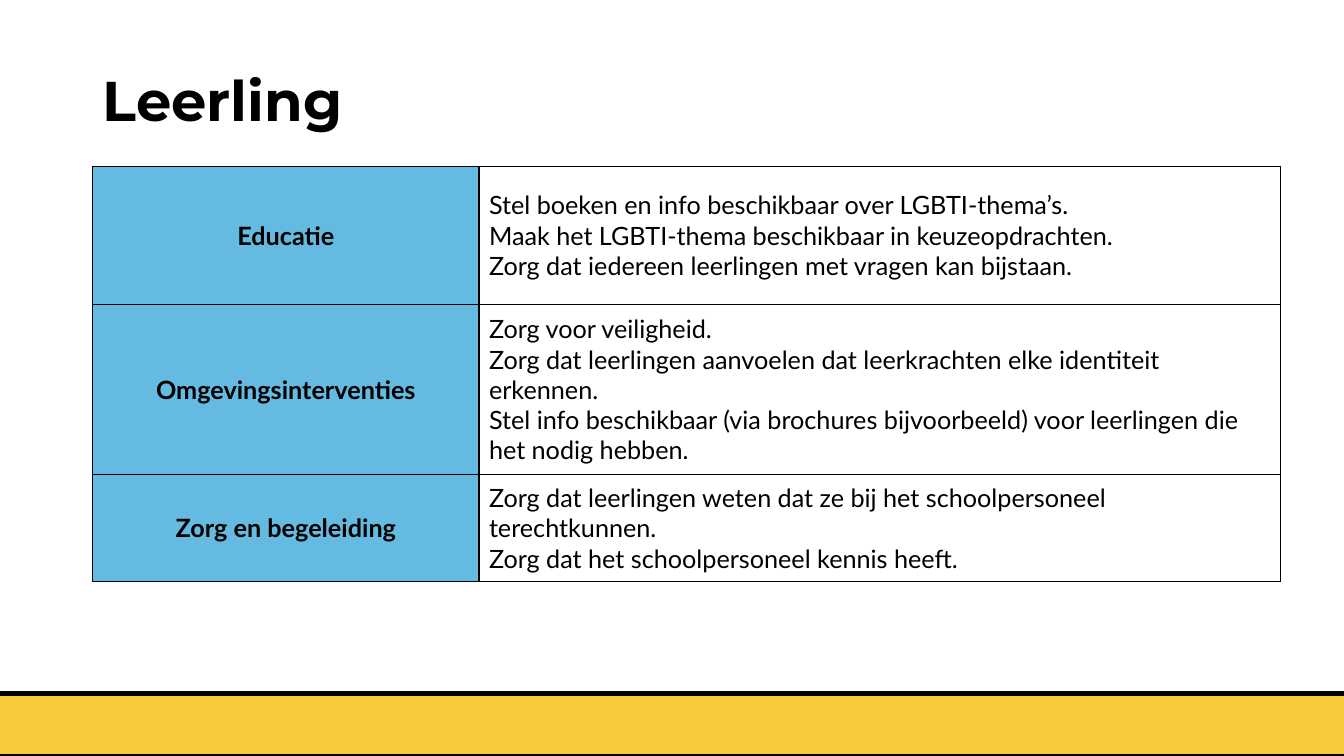
from lxml import etree
from pptx import Presentation
from pptx.dml.color import RGBColor
from pptx.enum.shapes import MSO_SHAPE
from pptx.enum.text import MSO_ANCHOR, PP_ALIGN
from pptx.oxml.ns import qn
from pptx.util import Inches, Pt

RECTANGLE = MSO_SHAPE.RECTANGLE
MIDDLE = MSO_ANCHOR.MIDDLE
LEFT, CENTER = PP_ALIGN.LEFT, PP_ALIGN.CENTER

BLACK = RGBColor(0x00, 0x00, 0x00)
YELLOW = RGBColor(0xF7, 0xCB, 0x3B)
BLUE = RGBColor(0x65, 0xBA, 0xE1)

TITLE_FONT = {"name": "Montserrat", "size": Pt(40), "bold": True}
TOPIC_FONT = {"name": "Lato", "size": Pt(18), "bold": True}
ADVICE_FONT = {"name": "Lato", "size": Pt(18), "bold": False}

COLUMN_WIDTHS = [3.83, 7.95]
ROW_HEIGHTS = [1.37, 1.69, 1.06]
ADVICE_BY_TOPIC = {
    "Educatie": [
        "Stel boeken en info beschikbaar over LGBTI-thema’s.",
        "Maak het LGBTI-thema beschikbaar in keuzeopdrachten.",
        "Zorg dat iedereen leerlingen met vragen kan bijstaan.",
    ],
    "Omgevingsinterventies": [
        "Zorg voor veiligheid.",
        "Zorg dat leerlingen aanvoelen dat leerkrachten elke identiteit erkennen.",
        "Stel info beschikbaar (via brochures bijvoorbeeld) voor leerlingen die het nodig hebben.",
    ],
    "Zorg en begeleiding": [
        "Zorg dat leerlingen weten dat ze bij het schoolpersoneel terechtkunnen.",
        "Zorg dat het schoolpersoneel kennis heeft.",
    ],
}


def write_lines(frame, lines, font_format, alignment=LEFT):
    for index, line in enumerate(lines):
        paragraph = frame.add_paragraph() if index else frame.paragraphs[0]
        paragraph.alignment = alignment
        run = paragraph.add_run()
        run.text = line
        for attribute, value in font_format.items():
            setattr(run.font, attribute, value)
        run.font.color.rgb = BLACK


def add_footer_band(slide):
    band = slide.shapes.add_shape(
        RECTANGLE, Inches(-0.37), Inches(6.88), Inches(14.07), Inches(0.62)
    )
    band.shadow.inherit = False
    band.fill.solid()
    band.fill.fore_color.rgb = YELLOW
    band.line.color.rgb = BLACK
    band.line.width = Pt(3)


def add_title(slide, title):
    title_box = slide.shapes.add_textbox(
        Inches(0.92), Inches(0.4), Inches(11.5), Inches(1.25)
    )
    frame = title_box.text_frame
    frame.word_wrap = True
    frame.vertical_anchor = MIDDLE
    write_lines(frame, [title], TITLE_FONT)
    frame.paragraphs[0].line_spacing = 0.9


def add_borders(cell):
    properties = cell._tc.get_or_add_tcPr()
    for side in ("a:lnL", "a:lnR", "a:lnT", "a:lnB"):
        border = etree.SubElement(properties, qn(side), w=str(Pt(1)))
        fill = etree.SubElement(border, qn("a:solidFill"))
        etree.SubElement(fill, qn("a:srgbClr"), val=str(BLACK))


def fill_cell(cell, lines, font_format, alignment, background=None):
    cell.vertical_anchor = MIDDLE
    add_borders(cell)
    if background is None:
        cell.fill.background()
    else:
        cell.fill.solid()
        cell.fill.fore_color.rgb = background
    write_lines(cell.text_frame, lines, font_format, alignment)


def add_advice_table(slide):
    table = slide.shapes.add_table(
        len(ROW_HEIGHTS), len(COLUMN_WIDTHS), Inches(0.92), Inches(1.65),
        Inches(sum(COLUMN_WIDTHS)), Inches(sum(ROW_HEIGHTS)),
    ).table
    table.first_row = False
    table.horz_banding = False
    for column, width in zip(table.columns, COLUMN_WIDTHS):
        column.width = Inches(width)
    for row, height in zip(table.rows, ROW_HEIGHTS):
        row.height = Inches(height)
    for row, (topic, advice) in zip(table.rows, ADVICE_BY_TOPIC.items()):
        topic_cell, advice_cell = row.cells
        fill_cell(topic_cell, [topic], TOPIC_FONT, CENTER, BLUE)
        fill_cell(advice_cell, advice, ADVICE_FONT, LEFT)


def main():
    presentation = Presentation()
    presentation.slide_width = Inches(13.33)
    presentation.slide_height = Inches(7.5)
    slide = presentation.slides.add_slide(presentation.slide_layouts[6])
    add_footer_band(slide)
    add_title(slide, "Leerling")
    add_advice_table(slide)
    presentation.save("out.pptx")


if __name__ == "__main__":
    main()
